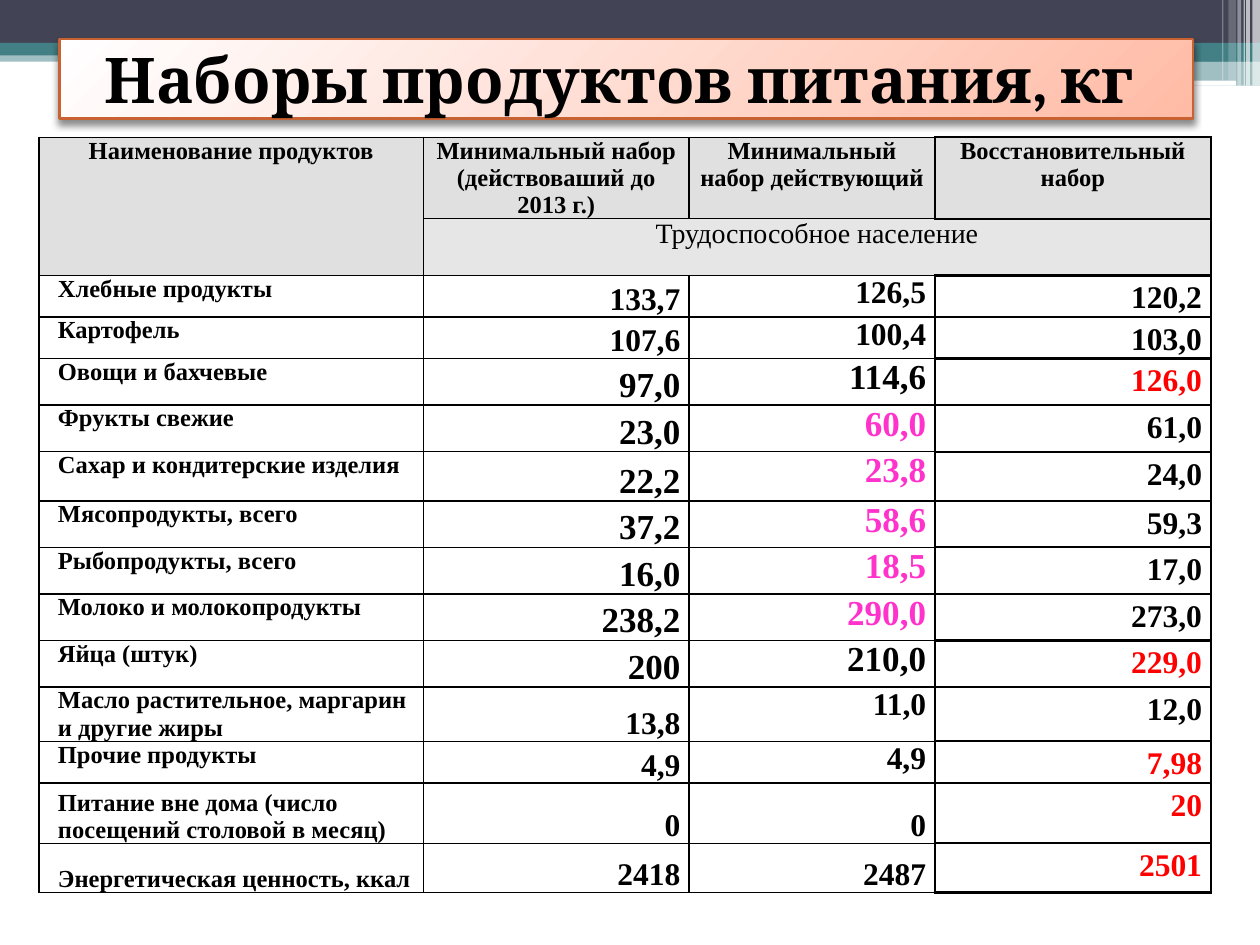
from lxml.etree import SubElement
from pptx import Presentation
from pptx.dml.color import RGBColor
from pptx.enum.shapes import MSO_SHAPE
from pptx.enum.text import MSO_ANCHOR, MSO_AUTO_SIZE, PP_ALIGN
from pptx.oxml import parse_xml
from pptx.oxml.ns import nsdecls, qn
from pptx.util import Inches, Pt

BLACK = RGBColor(0, 0, 0)
WHITE = RGBColor(255, 255, 255)
RED = RGBColor(255, 0, 0)
PINK = RGBColor(0xFF, 0x33, 0xCC)
NAVY = RGBColor(0x42, 0x44, 0x56)
TEAL = RGBColor(0x43, 0x80, 0x86)
PEACH = RGBColor(0xFF, 0xBB, 0xA6)
RUST = RGBColor(0xC8, 0x62, 0x32)
GREY = RGBColor(0xE0, 0xE0, 0xE0)
PALE = RGBColor(0xE6, 0xE6, 0xE6)

# Header bands: left, top, width, height in grid units, colour, opacity
BANDS = [
    (0, 4, 100, 0.9, TEAL, 50),
    (0, 0, 100, 3.4, NAVY, 100),
    (0, 3.4, 100, 1, TEAL, 100),
    (59.2, 3.9, 40.8, 1, TEAL, 100),
    (59.2, 4.8, 40.8, 2, TEAL, 50),
]
SLOTS = [(59.1, 5.4, 33.5, 0.3), (80.6, 6.4, 17.5, 0.4)]
# Thin vertical stripes: left, width, height, opacity
STRIPES = [
    (99.4, 0.6, 6.8, 65), (98.9, 0.3, 6.8, 65), (98.7, 0.1, 6.8, 60),
    (98.2, 0.3, 6.8, 40), (97.5, 0.6, 6.4, 20), (97, 0.1, 6.4, 30),
]

COLS = [30.5, 21.1, 19.5, 21.9]
HEADS = ["Наименование продуктов", "Минимальный набор (действоваший до 2013 г.)",
         "Минимальный набор действующий", "Восстановительный набор"]
TOPS = [6.4, 4.5]
# Row height, name, three values, size of the first two, colours of the last two
FOODS = [
    (3.3, "Хлебные продукты", "133,7", "126,5", "120,2", 18, BLACK, BLACK),
    (3.3, "Картофель", "107,6", "100,4", "103,0", 18, BLACK, BLACK),
    (3.7, "Овощи и бахчевые", "97,0", "114,6", "126,0", 20, BLACK, RED),
    (3.7, "Фрукты свежие", "23,0", "60,0", "61,0", 20, PINK, BLACK),
    (3.9, "Сахар и кондитерские изделия", "22,2", "23,8", "24,0", 20, PINK, BLACK),
    (3.7, "Мясопродукты, всего", "37,2", "58,6", "59,3", 20, PINK, BLACK),
    (3.7, "Рыбопродукты, всего", "16,0", "18,5", "17,0", 20, PINK, BLACK),
    (3.7, "Молоко и молокопродукты", "238,2", "290,0", "273,0", 20, PINK, BLACK),
    (3.7, "Яйца (штук)", "200", "210,0", "229,0", 20, BLACK, RED),
    (3.7, "Масло растительное, маргарин и другие жиры",
     "13,8", "11,0", "12,0", 18, BLACK, BLACK),
    (4.2, "Прочие продукты", "4,9", "4,9", "7,98", 18, BLACK, RED),
    (3.3, "Питание вне дома (число посещений столовой в месяц)",
     "0", "0", "20", 18, BLACK, RED),
    (3.9, "Энергетическая ценность, ккал", "2418", "2487", "2501", 18, BLACK, RED),
]
# The three last heights follow the wrapped names
HIGHS = [row[0] for row in FOODS[:9]] + [4.3, 3.3, 4.8, 3.9]


def unit(n):
    """One grid unit is a hundredth of the slide's width."""
    return Inches(n / 10)


class Board:
    face, head = "Times New Roman", "Cambria"

    def __init__(self, slide):
        self.slide = slide

    def band(self, x, y, w, h, color, alpha=100, kind=MSO_SHAPE.RECTANGLE):
        shape = self.slide.shapes.add_shape(kind, unit(x), unit(y), unit(w), unit(h))
        shape.shadow.inherit = False
        shape.fill.solid()
        shape.fill.fore_color.rgb = color
        shape.line.fill.background()
        if alpha < 100:
            tint = shape.element.spPr.find(qn("a:solidFill"))[0]
            SubElement(tint, qn("a:alpha"), val=str(alpha * 1000))

    def style(self, par, size, color=BLACK, bold=True, face=None):
        for run in par.runs:
            font = run.font
            font.name, font.size, font.bold = face or self.face, Pt(size), bold
            font.color.rgb = color

    def title(self, text, x, y, w, h):
        box = self.slide.shapes.title
        box.element.getparent().append(box.element)
        box.left, box.top, box.width, box.height = map(unit, (x, y, w, h))
        box.fill.gradient()
        box.fill.gradient_angle = 315
        for stop, color in zip(box.fill.gradient_stops, (WHITE, PEACH)):
            stop.color.rgb = color
        box.line.color.rgb = RUST
        box.line.width = Pt(1.5)
        box.shadow.inherit = False
        box.element.spPr.find(qn("a:effectLst")).append(parse_xml(
            f'<a:outerShdw {nsdecls("a")} blurRad="50800" dist="38100" dir="5400000">'
            '<a:srgbClr val="000000"><a:alpha val="45000"/></a:srgbClr></a:outerShdw>'))
        frame = box.text_frame
        frame.text = text
        frame.word_wrap = True
        frame.auto_size = MSO_AUTO_SIZE.NONE
        frame.vertical_anchor = MSO_ANCHOR.MIDDLE
        par = frame.paragraphs[0]
        par.alignment = PP_ALIGN.CENTER
        self.style(par, 36, face=self.head)

    def table(self, x, y, cols, rows):
        grid = self.slide.shapes.add_table(
            len(rows), len(cols), unit(x), unit(y), unit(sum(cols)), unit(sum(rows))).table
        grid.first_row = grid.horz_banding = False
        for col, w in zip(grid.columns, cols):
            col.width = unit(w)
        for row, h in zip(grid.rows, rows):
            row.height = unit(h)
            for c, cell in enumerate(row.cells):
                cell.fill.background()
                self.edge(cell, 1.5 if c > 1 else 1, 1.5 if c > 2 else 1)
        return grid

    def edge(self, cell, side, flat):
        props = cell._tc.get_or_add_tcPr()
        for n, (tag, size) in enumerate(zip("LRTB", (side, side, flat, flat))):
            props.insert(n, parse_xml(
                f'<a:ln{tag} {nsdecls("a")} w="{Pt(size)}"><a:solidFill>'
                f'<a:srgbClr val="{BLACK}"/></a:solidFill></a:ln{tag}>'))

    def cell(self, cell, text, size, align, color=BLACK, bold=True,
             fill=None, low=False, space=None, indent=0):
        cell.margin_left = cell.margin_right = unit(0.7)
        cell.margin_top = cell.margin_bottom = 0
        cell.vertical_anchor = MSO_ANCHOR.BOTTOM if low else MSO_ANCHOR.TOP
        if fill:
            cell.fill.solid()
            cell.fill.fore_color.rgb = fill
        cell.text_frame.text = text
        par = cell.text_frame.paragraphs[0]
        par.alignment = align
        if space:
            par.line_spacing = space
        if indent:
            par._p.get_or_add_pPr().set("marL", str(unit(indent)))
        self.style(par, size, color, bold)


def main():
    deck = Presentation()
    deck.slide_width, deck.slide_height = unit(100), unit(75)
    board = Board(deck.slides.add_slide(deck.slide_layouts[5]))

    # Header decoration
    for band in BANDS:
        board.band(*band)
    for slot in SLOTS:
        board.band(*slot, WHITE, kind=MSO_SHAPE.ROUNDED_RECTANGLE)
    for x, w, h, alpha in STRIPES:
        board.band(x, 0, w, h, WHITE, alpha)
    board.title("Наборы продуктов питания, кг ", 4.7, 3.1, 90, 6.3)

    # Table heading
    grid = board.table(3.1, 10.9, COLS, TOPS + HIGHS)
    grid.cell(0, 0).merge(grid.cell(1, 0))
    grid.cell(1, 1).merge(grid.cell(1, 3))
    for c, text in enumerate(HEADS):
        board.cell(grid.cell(0, c), text, 14, PP_ALIGN.CENTER, fill=GREY)
    board.cell(grid.cell(1, 1), "Трудоспособное население", 16, PP_ALIGN.CENTER,
               bold=False, fill=PALE)

    # Food rows
    for r, (_, name, old, new, full, size, tone, mark) in enumerate(FOODS, 2):
        late = r >= len(FOODS)
        last = r > len(FOODS)
        board.cell(grid.cell(r, 0), name, 14, PP_ALIGN.LEFT, low=late, indent=0.8)
        board.cell(grid.cell(r, 1), old, size, PP_ALIGN.RIGHT, low=True,
                   space=None if last else 1.15)
        board.cell(grid.cell(r, 2), new, size, PP_ALIGN.RIGHT, tone, low=late)
        board.cell(grid.cell(r, 3), full, 18, PP_ALIGN.RIGHT, mark, space=1.15)

    deck.save("out.pptx")


if __name__ == "__main__":
    main()
